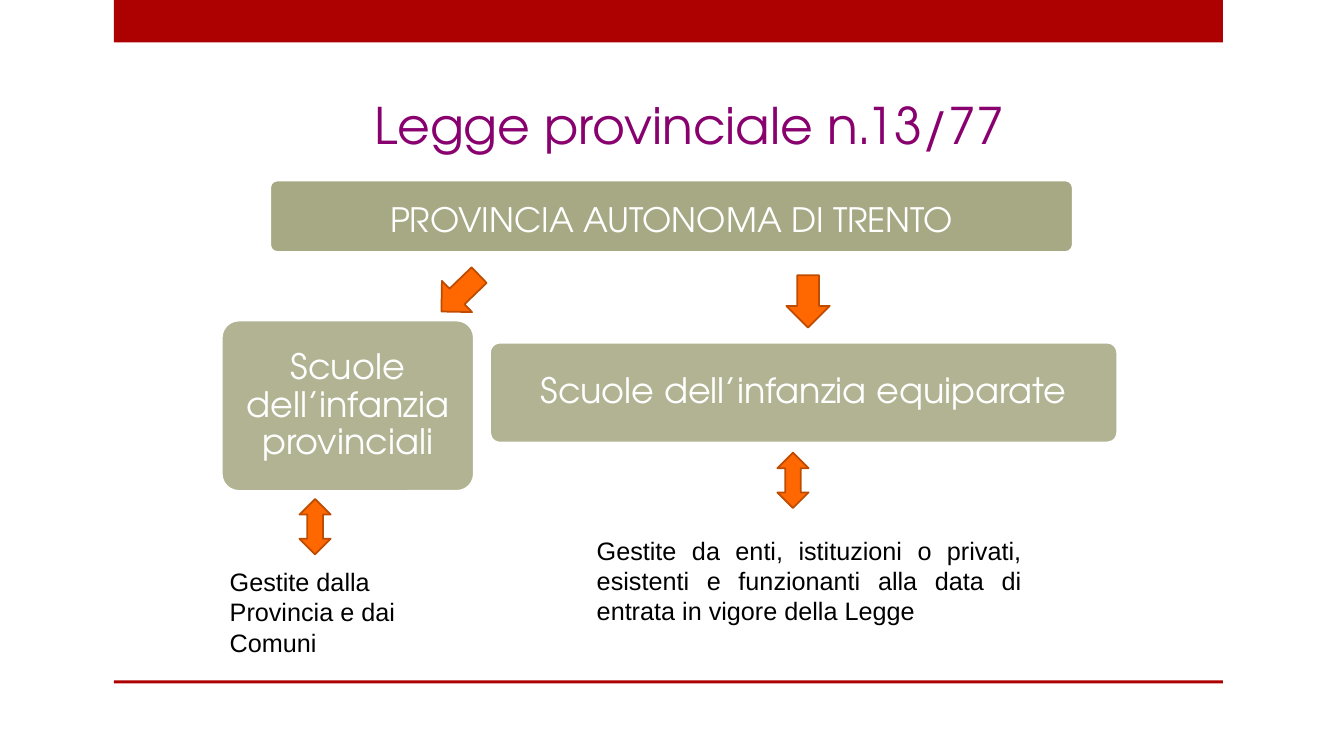
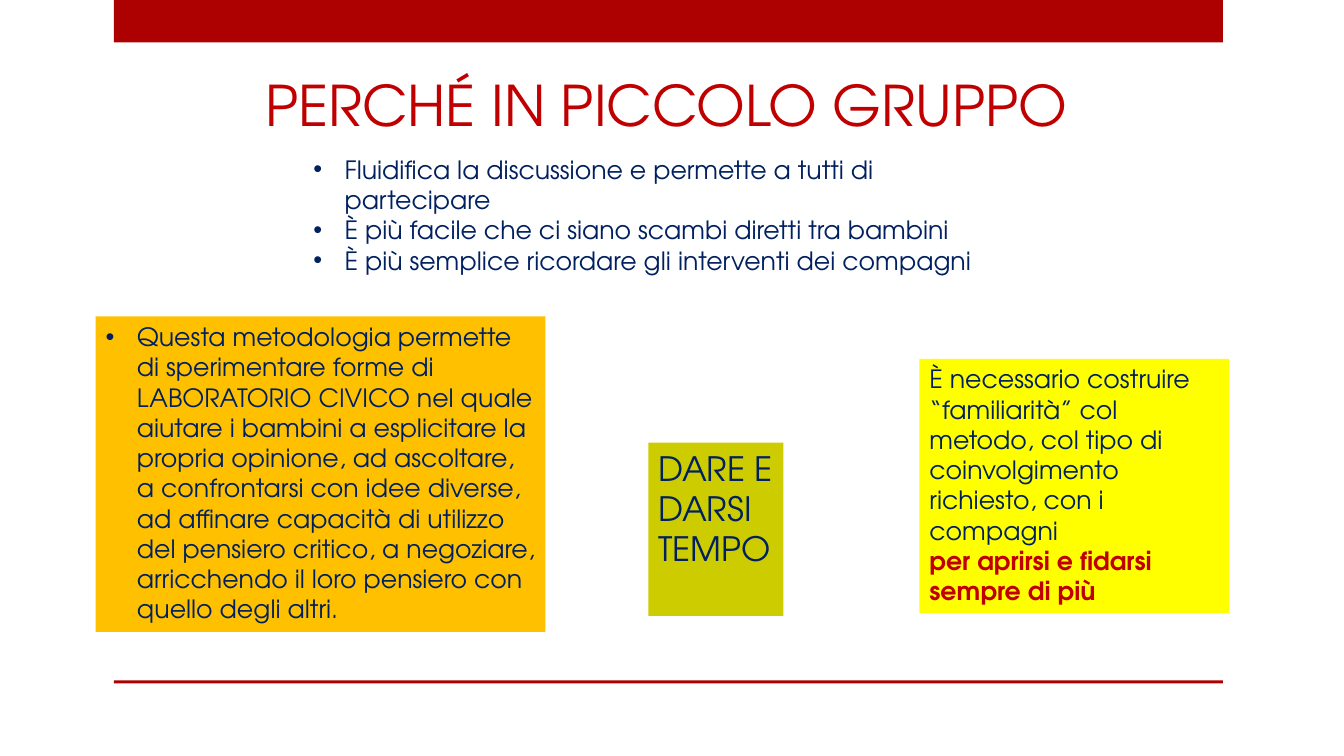
from lxml import etree
from pptx import Presentation
from pptx import util as u
from pptx.dml.color import RGBColor
from pptx.enum import shapes, text
from pptx.oxml.ns import qn

DISPLAY, PLAIN = "TeX Gyre Adventor", "Arial"
RED, NAVY, PURPLE, CRIMSON = "AD0101", "002060", "89006F", "C00000"
SAGE, ORANGE, RUST, WHITE, BLACK = "909465", "FF6700", "BD4C00", "FFFFFF", "000000"
WIDTH, HEIGHT = 13.33, 7.5
BANDS = [(1.13, 0, 11, 0.42), (1.13, 6.75, 11, 0.03)]

LAW_TITLE = ("Legge provinciale n.13/77", (3.61, 0.72, 6.72, 0.86), 36, PURPLE,
             text.MSO_ANCHOR.BOTTOM)
SCHOOLS = [
    ("PROVINCIA AUTONOMA DI TRENTO", (2.68, 1.79, 7.96, 0.71), 24, 80, 0),
    ("Scuole dell’infanzia provinciali", (2.2, 3.18, 2.5, 1.69), 25, 70, 0.1),
    ("Scuole dell’infanzia equiparate", (4.86, 3.4, 6.22, 0.99), 25, 70, 0.1),
]
DOWN, BOTH = shapes.MSO_SHAPE.DOWN_ARROW, shapes.MSO_SHAPE.UP_DOWN_ARROW
ARROW_SIZES = {DOWN: (0.43, 0.52), BOTH: (0.31, 0.55)}
ARROWS = [(DOWN, 4.35, 2.65, 46), (DOWN, 7.8, 2.73, 0),
          (BOTH, 2.97, 4.95, 0), (BOTH, 7.71, 4.49, 0)]
MANAGERS = [
    ("Gestite dalla Provincia e dai Comuni", (2.18, 5.57, 2.02, 1.01),
     text.PP_ALIGN.LEFT),
    ("Gestite da enti, istituzioni o privati, esistenti e funzionanti alla data "
     "di entrata in vigore della Legge", (5.82, 5.26, 4.41, 1.01),
     text.PP_ALIGN.JUSTIFY),
]

GROUP_TITLE = ("PERCHÉ IN PICCOLO GRUPPO", (2.53, 0.65, 8.28, 0.77), 40, CRIMSON,
               text.MSO_ANCHOR.TOP)
REASONS = [
    "Fluidifica la discussione e permette a tutti di partecipare",
    "È più facile che ci siano scambi diretti tra bambini",
    "È più semplice ricordare gli interventi dei compagni",
]
METHOD = [
    "Questa metodologia permette di sperimentare forme di LABORATORIO CIVICO nel "
    "quale aiutare i bambini a esplicitare la propria opinione, ad ascoltare, a "
    "confrontarsi con idee diverse, ad affinare capacità di utilizzo del pensiero "
    "critico, a negoziare, arricchendo il loro pensiero con quello degli altri."
]
FAMILIARITY = [
    "È necessario costruire “familiarità” col metodo, col tipo di coinvolgimento "
    "richiesto, con i compagni",
    "per aprirsi e fidarsi sempre di più",
]
PANELS = [
    (REASONS, (3.01, 1.48, 7, 1.62), None, 18, True),
    (METHOD, (0.95, 3.14, 4.46, 3.13), "FFC000", 18, True),
    (["DARE E DARSI TEMPO"], (6.43, 4.39, 1.34, 1.72), "CCCC00", 24, False),
    (FAMILIARITY, (9.12, 3.56, 3.07, 2.52), "FFFF00", 18, False),
]


def rgb(value):
    return RGBColor.from_string(value)


def inches(box):
    return [u.Inches(length) for length in box]


def add_figure(slide, kind, box, fill, line=None, opacity=100):
    figure = slide.shapes.add_shape(kind, *inches(box))
    figure.shadow.inherit = False
    figure.fill.solid()
    figure.fill.fore_color.rgb = rgb(fill)
    if opacity < 100:
        colour = figure.element.spPr.find(qn("a:solidFill"))[0]
        etree.SubElement(colour, qn("a:alpha"), val=str(opacity * 1000))
    if line:
        figure.line.color.rgb = rgb(line)
        figure.line.width = u.Pt(1.25)
    else:
        figure.line.fill.background()
    return figure


def write(frame, lines, size, colour, font=DISPLAY, align=text.PP_ALIGN.LEFT,
          anchor=text.MSO_ANCHOR.TOP):
    frame.word_wrap = True
    frame.auto_size = text.MSO_AUTO_SIZE.NONE
    frame.vertical_anchor = anchor
    for index, line in enumerate(lines):
        paragraph = frame.add_paragraph() if index else frame.paragraphs[0]
        paragraph.text = line
        paragraph.alignment = align
        paragraph.font.size = u.Pt(size)
        paragraph.font.name = font
        paragraph.font.color.rgb = rgb(colour)
    return frame.paragraphs


def add_bullet(paragraph):
    properties = paragraph._p.get_or_add_pPr()
    indent = u.Inches(0.31)
    properties.set("marL", str(indent))
    properties.set("indent", str(-indent))
    font = etree.Element(qn("a:buFont"), typeface=PLAIN)
    mark = etree.Element(qn("a:buChar"), char="•")
    properties.insert_element_before(font, "a:tabLst", "a:defRPr", "a:extLst")
    properties.insert_element_before(mark, "a:tabLst", "a:defRPr", "a:extLst")


def add_titled_slide(deck, layout, title, box, size, colour, anchor):
    slide = deck.slides.add_slide(layout)
    heading = slide.shapes.title
    heading.left, heading.top, heading.width, heading.height = inches(box)
    write(heading.text_frame, [title], size, colour, anchor=anchor)
    return slide


def draw_bands(slide, layout):
    for box in BANDS:
        band = add_figure(slide, shapes.MSO_SHAPE.RECTANGLE, box, RED)
        layout.shapes.element.append(band.element)


def draw_law(slide):
    for kind, left, top, turn in ARROWS:
        arrow = add_figure(slide, kind, (left, top, *ARROW_SIZES[kind]), ORANGE, RUST)
        arrow.rotation = turn
    for manager, box, align in MANAGERS:
        note = slide.shapes.add_textbox(*inches(box))
        write(note.text_frame, [manager], 18, BLACK, PLAIN, align)
    for name, box, size, opacity, bottom in SCHOOLS:
        school = add_figure(slide, shapes.MSO_SHAPE.ROUNDED_RECTANGLE, box, SAGE,
                            WHITE, opacity)
        school.adjustments[0] = 0.1
        frame = school.text_frame
        frame.margin_top, frame.margin_bottom = inches((0.1, bottom))
        label = write(frame, [name], size, WHITE, align=text.PP_ALIGN.CENTER,
                      anchor=text.MSO_ANCHOR.MIDDLE)[0]
        label.line_spacing = 0.9


def draw_group(slide):
    for lines, box, fill, size, bulleted in PANELS:
        if fill:
            panel = add_figure(slide, shapes.MSO_SHAPE.RECTANGLE, box, fill)
        else:
            panel = slide.shapes.add_textbox(*inches(box))
        paragraphs = write(panel.text_frame, lines, size, NAVY)
        if bulleted:
            for paragraph in paragraphs:
                add_bullet(paragraph)
        if lines is FAMILIARITY:
            paragraphs[-1].font.bold = True
            paragraphs[-1].font.color.rgb = rgb(CRIMSON)


def main():
    deck = Presentation()
    deck.slide_width, deck.slide_height = inches((WIDTH, HEIGHT))
    layout = deck.slide_layouts.get_by_name("Title Only")
    law = add_titled_slide(deck, layout, *LAW_TITLE)
    draw_bands(law, layout)
    draw_law(law)
    draw_group(add_titled_slide(deck, layout, *GROUP_TITLE))
    deck.save("out.pptx")


if __name__ == "__main__":
    main()
